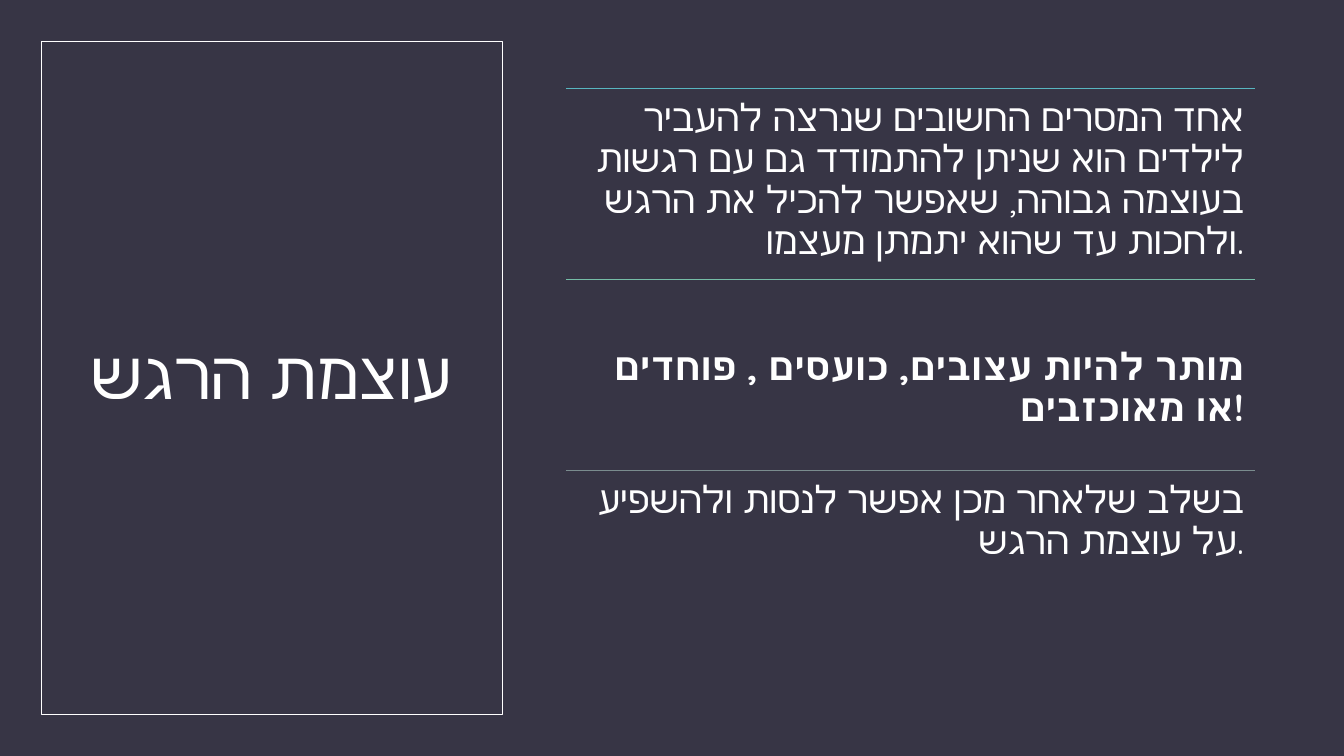
from lxml.etree import SubElement
from pptx import Presentation
from pptx.dml.color import RGBColor
from pptx.enum.shapes import MSO_CONNECTOR, MSO_SHAPE
from pptx.enum.text import MSO_ANCHOR, MSO_AUTO_SIZE, PP_ALIGN
from pptx.oxml.ns import qn
from pptx.util import Emu, Pt

FONT = "Quicksand"
NAVY = RGBColor(0x37, 0x35, 0x45)
WHITE = RGBColor(0xFF, 0xFF, 0xFF)
TEAL = RGBColor(0x58, 0xB6, 0xC0)
GREEN = RGBColor(0x75, 0xBD, 0xA7)
GRAY = RGBColor(0x7A, 0x8C, 0x8E)

INSET = 11
MESSAGES = [
    ("אחד המסרים החשובים שנרצה להעביר לילדים הוא שניתן להתמודד גם עם רגשות "
     "בעוצמה גבוהה, שאפשר להכיל את הרגש ולחכות עד שהוא יתמתן מעצמו.", TEAL, False, INSET),
    ("מותר להיות עצובים, כועסים , פוחדים או מאוכזבים!", GREEN, True, INSET + 58),
    ("בשלב שלאחר מכן אפשר לנסות ולהשפיע על עוצמת הרגש.", GRAY, False, INSET),
]


def px(n):
    """Convert slide pixels to EMU."""
    return Emu(round(n * 914400 / 100.8))


def write(tf, text, size, align, bold=False):
    """Write one white run into the first paragraph and return the paragraph."""
    tf.word_wrap = True
    tf.auto_size = MSO_AUTO_SIZE.NONE
    p = tf.paragraphs[0]
    p.alignment = align
    p.line_spacing = 0.9
    r = p.add_run()
    r.text = text
    r.font.name = FONT
    r.font.size = Pt(size)
    r.font.bold = bold
    r.font.color.rgb = WHITE
    SubElement(r._r.get_or_add_rPr(), qn("a:cs"), typeface=FONT)
    return p


def add_title_panel(s, x, y, w, h):
    """Place the title inside a thin white frame."""
    pad_x, pad_y = 22, 34
    title = s.shapes.title
    title.left, title.top = px(x + pad_x), px(y + pad_y)
    title.width, title.height = px(w - 2 * pad_x), px(h - 2 * pad_y)
    title.text_frame.vertical_anchor = MSO_ANCHOR.MIDDLE
    p = write(title.text_frame, "עוצמת הרגש", 48, PP_ALIGN.CENTER)
    p._p.get_or_add_pPr().set("rtl", "1")

    frame = s.shapes.add_shape(MSO_SHAPE.RECTANGLE, px(x), px(y), px(w), px(h))
    frame.shadow.inherit = False
    frame.fill.background()
    frame.line.color.rgb = WHITE
    frame.line.width = Pt(0.5)


def add_message(s, x, y, w, h, text, color, bold, top):
    """Place one message under its coloured rule."""
    rule = s.shapes.add_connector(MSO_CONNECTOR.STRAIGHT, px(x), px(y), px(x + w), px(y))
    rule.line.color.rgb = color
    rule.line.width = Pt(0.5)
    SubElement(rule._element.spPr, qn("a:effectLst"))

    tf = s.shapes.add_textbox(px(x), px(y), px(w), px(h)).text_frame
    tf.margin_left = tf.margin_right = tf.margin_bottom = px(INSET)
    tf.margin_top = px(top)
    write(tf, text, 27, PP_ALIGN.RIGHT, bold)


def add_messages(s, x, y, w, h):
    """Stack the messages in equal rows."""
    row = h // len(MESSAGES)
    for i, message in enumerate(MESSAGES):
        add_message(s, x, y + i * row, w, row, *message)


def main():
    """Build and save the slide."""
    prs = Presentation()
    prs.slide_width, prs.slide_height = px(1344), px(756)
    s = prs.slides.add_slide(prs.slide_layouts[5])
    s.background.fill.solid()
    s.background.fill.fore_color.rgb = NAVY
    add_title_panel(s, 41, 41, 461, 673)
    add_messages(s, 566, 88, 689, 573)
    prs.save("out.pptx")


if __name__ == "__main__":
    main()
